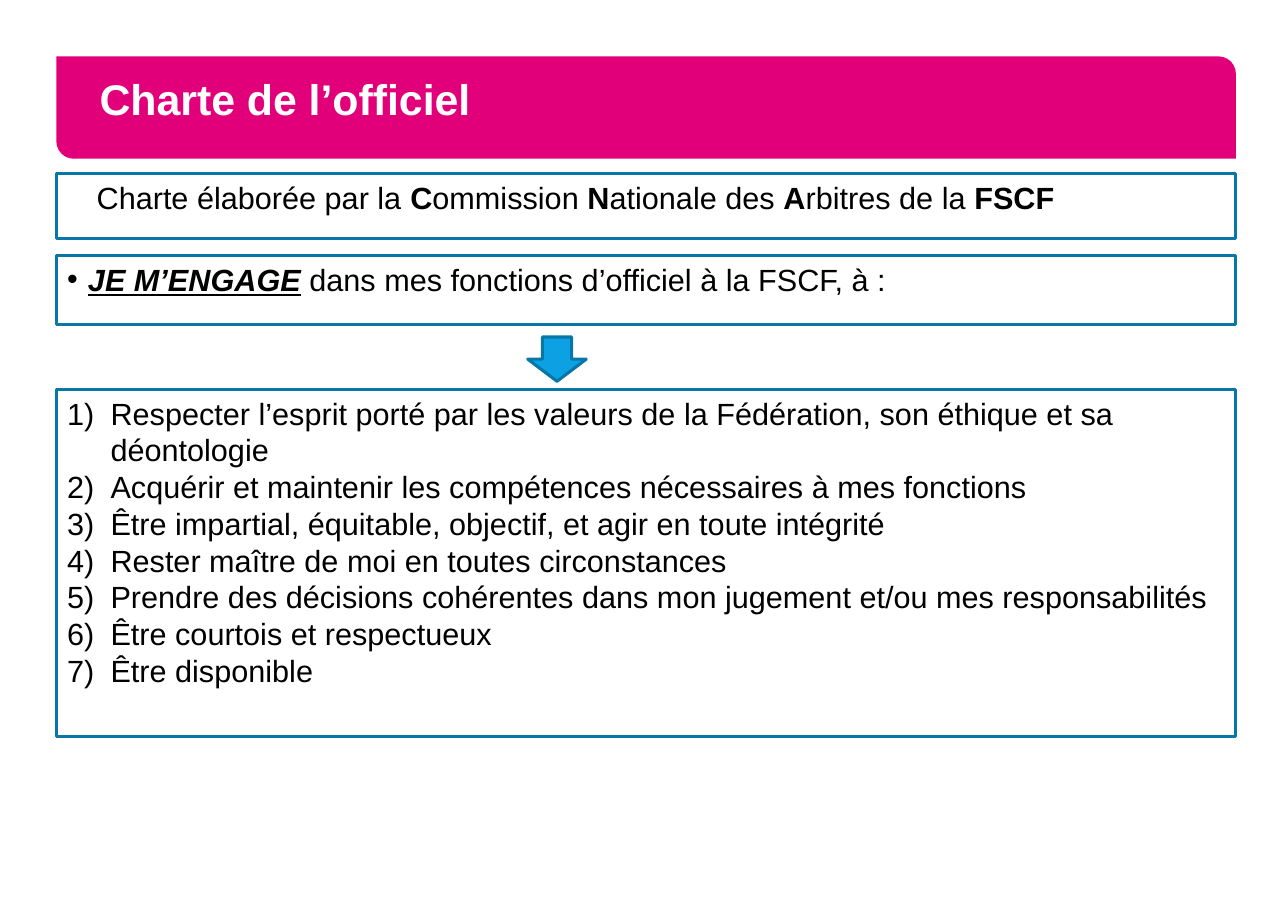
from pptx import Presentation
from pptx.dml.color import RGBColor
from pptx.enum.shapes import MSO_SHAPE
from pptx.enum.text import MSO_ANCHOR, PP_ALIGN
from pptx.oxml.ns import qn
from pptx.util import Cm, Pt
from lxml.etree import SubElement

PINK = RGBColor(0xE2, 0x00, 0x7A)
BLUE = RGBColor(0x0B, 0xA1, 0xE2)
EDGE = RGBColor(0x08, 0x77, 0xA7)
BLACK = RGBColor(0, 0, 0)
WHITE = RGBColor(255, 255, 255)

LEFT, WIDTH = 1.3, 27.2
INTRO = [
    ("Charte élaborée par la ", ""), ("C", "b"), ("ommission ", ""),
    ("N", "b"), ("ationale des ", ""), ("A", "b"),
    ("rbitres de la ", ""), ("FSCF", "b"),
]
PLEDGE = [
    ("JE M’ENGAGE", "biu"),
    (" dans mes fonctions d’officiel à la FSCF, à :", ""),
]
RULES = [
    "Respecter l’esprit porté par les valeurs de la Fédération, son éthique et sa déontologie",
    "Acquérir et maintenir les compétences nécessaires à mes fonctions",
    "Être impartial, équitable, objectif, et agir en toute intégrité",
    "Rester maître de moi en toutes circonstances",
    "Prendre des décisions cohérentes dans mon jugement et/ou mes responsabilités",
    "Être courtois et respectueux",
    "Être disponible",
]


def add_form(slide, kind, left, top, width, height, fill=None, edge=None):
    """Add a preset shape without shadow."""
    form = slide.shapes.add_shape(kind, Cm(left), Cm(top), Cm(width), Cm(height))
    form.shadow.inherit = False
    if fill is None:
        form.fill.background()
    else:
        form.fill.solid()
        form.fill.fore_color.rgb = fill
    if edge is None:
        form.line.fill.background()
    else:
        form.line.color.rgb = edge
        form.line.width = Pt(2)
    return form


def add_runs(para, runs, size=20, color=BLACK):
    """Write runs of text with their style letters."""
    for text, style in runs:
        run = para.add_run()
        run.text = text
        font = run.font
        font.name, font.size = "Arial", Pt(size)
        font.color.rgb = color
        font.bold = "b" in style
        font.italic = "i" in style
        font.underline = "u" in style


def set_list(para, margin, indent, tag=None, **attrs):
    """Set the hanging indent and the bullet of a paragraph."""
    props = para._p.get_or_add_pPr()
    props.set("marL", str(Cm(margin)))
    props.set("indent", str(Cm(indent)))
    if tag:
        SubElement(props, qn("a:buFont"), typeface="Arial")
        SubElement(props, qn(tag), **attrs)


def add_box(slide, top, height, paras, align, *marks, **attrs):
    """Add an outlined box holding one or more paragraphs."""
    box = add_form(slide, MSO_SHAPE.RECTANGLE, LEFT, top, WIDTH, height, edge=EDGE)
    frame = box.text_frame
    frame.word_wrap = True
    frame.vertical_anchor = MSO_ANCHOR.TOP
    for i, runs in enumerate(paras):
        para = frame.add_paragraph() if i else frame.paragraphs[0]
        para.alignment = align
        set_list(para, *marks, **attrs)
        add_runs(para, runs)


def add_title(slide, text):
    """Add the pink banner with its title."""
    form = add_form(slide, MSO_SHAPE.ROUND_2_DIAG_RECTANGLE,
                    LEFT, 1.3, WIDTH, 2.36, fill=PINK)
    form.adjustments[0] = 0
    form.adjustments[1] = 0.17
    frame = form.text_frame
    frame.word_wrap = True
    frame.vertical_anchor = MSO_ANCHOR.MIDDLE
    frame.margin_left = frame.margin_right = Cm(0.88)
    para = frame.paragraphs[0]
    para.alignment = PP_ALIGN.LEFT
    para.line_spacing = Pt(22)
    add_runs(para, [(text, "b")], 28, WHITE)


def main():
    """Build the slide and save it."""
    deck = Presentation()
    deck.slide_width, deck.slide_height = Cm(29.7), Cm(21)
    slide = deck.slides.add_slide(deck.slide_layouts[6])
    add_title(slide, "Charte de l’officiel")
    add_box(slide, 4.01, 1.5, [INTRO], PP_ALIGN.LEFT, 1.47, -0.79)
    add_box(slide, 5.89, 1.6, [PLEDGE], PP_ALIGN.JUSTIFY,
            0.48, -0.48, "a:buChar", char="•")
    add_form(slide, MSO_SHAPE.DOWN_ARROW, 12.17, 7.77, 1.35, 1.02, BLUE, EDGE)
    add_box(slide, 8.97, 8, [[(rule, "")] for rule in RULES], PP_ALIGN.LEFT,
            1.0, -1.0, "a:buAutoNum", type="arabicParenR")
    deck.save("out.pptx")


if __name__ == "__main__":
    main()
